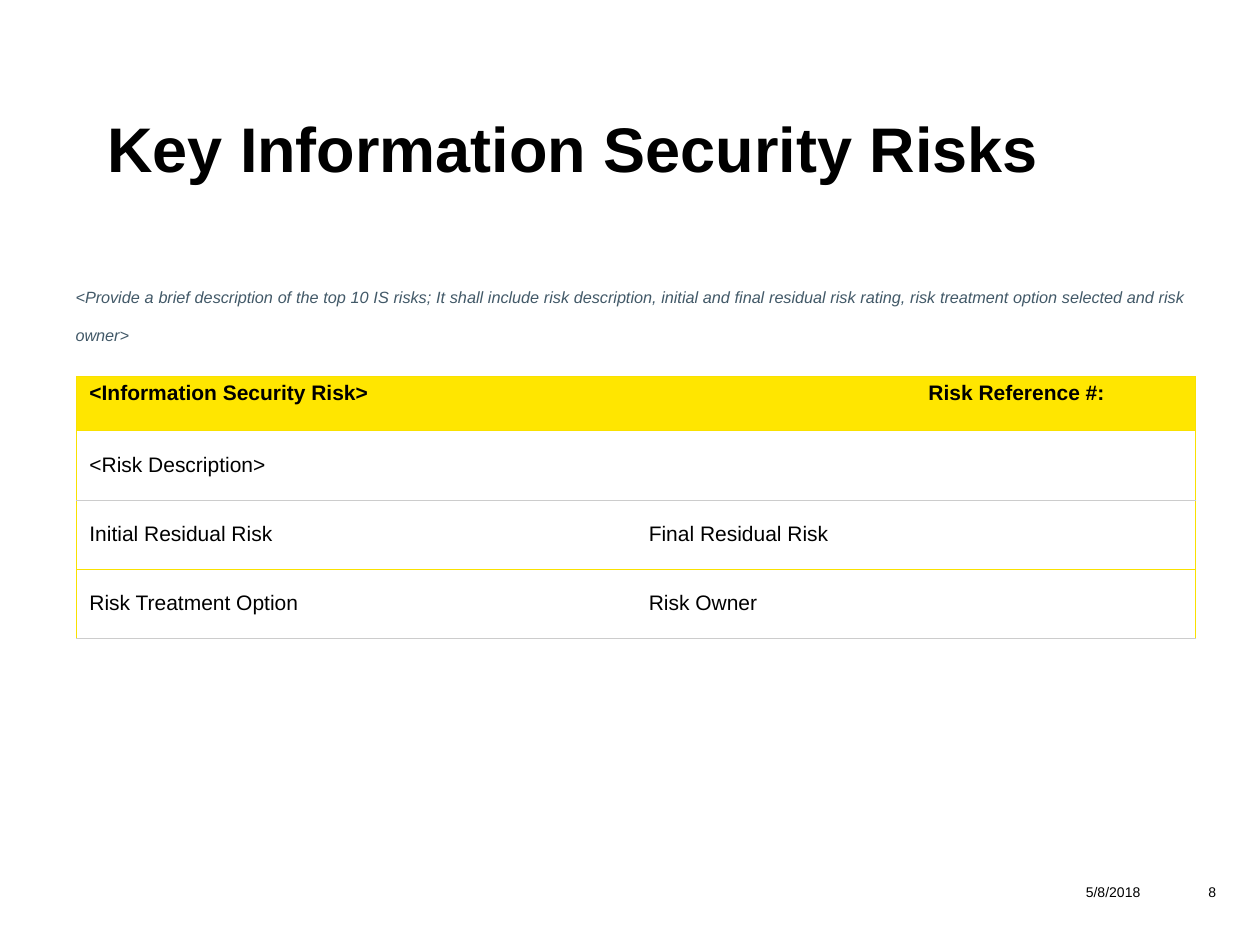
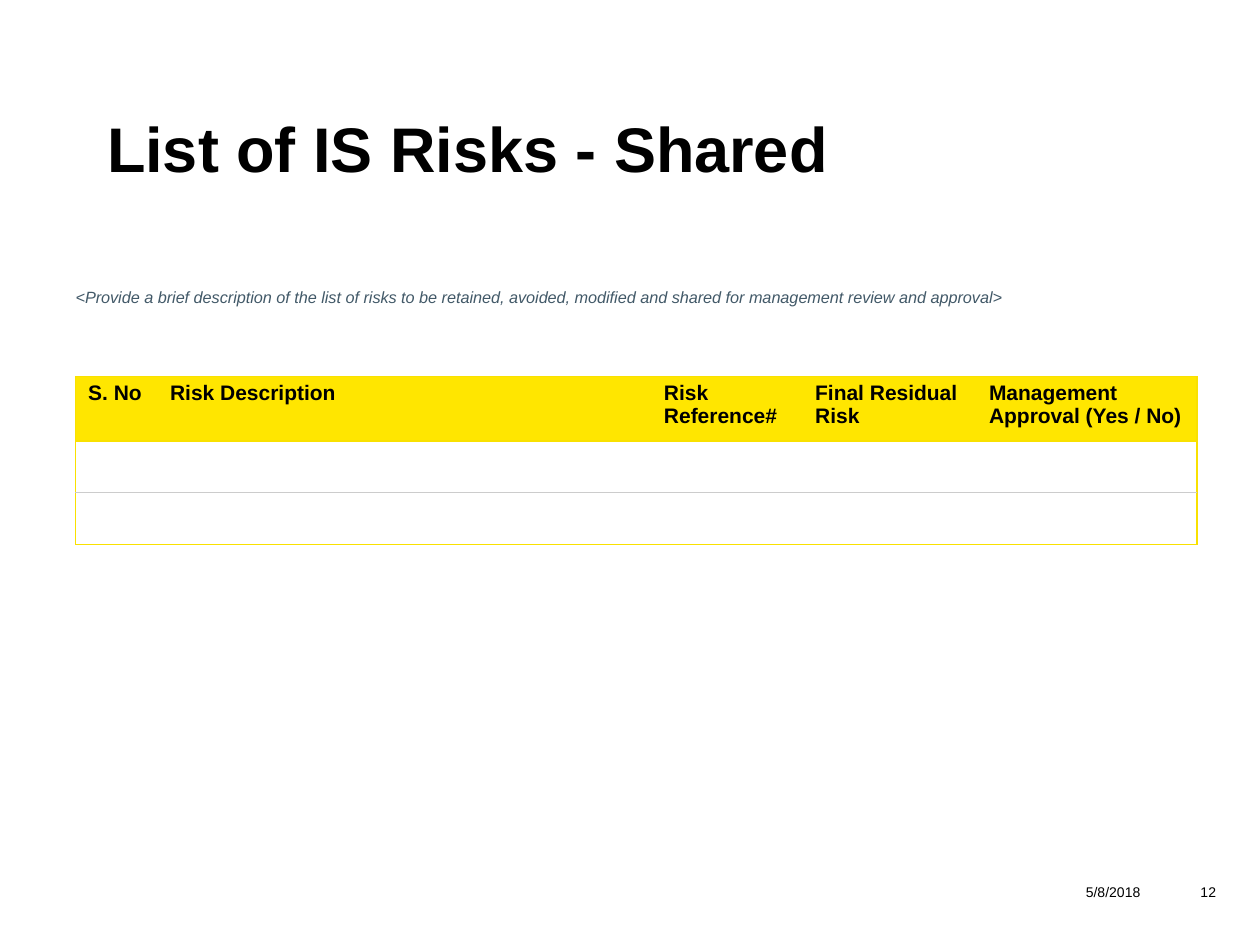
import pptx
import pptx.util
import pptx.dml.color
import pptx.enum.text
from dataclasses import dataclass
from lxml import etree
from pptx.util import Inches

ALIGN = pptx.enum.text.PP_ALIGN
ANCHOR = pptx.enum.text.MSO_ANCHOR
NS = "{http://schemas.openxmlformats.org/drawingml/2006/main}"
PLAIN_TABLE = "{2D5ABB26-0587-4C30-8999-92F81FD0307C}"


@dataclass(frozen=True)
class Theme:
    font: str = "Arial"
    ink: str = "000000"
    note: str = "425968"
    header: str = "FFE600"
    border: str = "F9E100"
    rule: str = "CCCCCC"
    title_pt: float = 36
    table_pt: float = 12
    note_pt: float = 9.3
    note_line_pt: float = 21.7
    footer_pt: float = 8
    border_pt: float = 0.75


class Deck:
    def __init__(self, theme):
        self.theme = theme
        self.prs = pptx.Presentation()
        self.prs.slide_width, self.prs.slide_height = Inches(10), Inches(7.5)
        self.s = None

    def place(self, sp, left, top, width, height):
        sp.left, sp.top = Inches(left), Inches(top)
        sp.width, sp.height = Inches(width), Inches(height)

    def set_text(self, tf, text, size, color=None, bold=False, italic=False,
                 align=ALIGN.LEFT, anchor=ANCHOR.MIDDLE):
        tf.text = text
        tf.word_wrap = True
        tf.vertical_anchor = anchor
        p = tf.paragraphs[0]
        p.alignment = align
        for r in p.runs:
            f = r.font
            f.name, f.size = self.theme.font, pptx.util.Pt(size)
            f.bold, f.italic = bold, italic
            f.color.rgb = pptx.dml.color.RGBColor.from_string(color or self.theme.ink)
        return p

    # Slide with title, guidance note and footer
    def slide(self, title, note, number):
        self.s = self.prs.slides.add_slide(self.prs.slide_layouts[1])
        self.title(title)
        self.note(note)
        self.footer("5/8/2018", 7.92, 1.83, ALIGN.CENTER)
        self.footer(number, 9.25, 0.5, ALIGN.RIGHT)

    def title(self, text):
        sp = self.s.shapes.title
        self.place(sp, 0.75, 0.42, 8.5, 1.5)
        sp.text_frame.auto_size = pptx.enum.text.MSO_AUTO_SIZE.NONE
        self.set_text(sp.text_frame, text, self.theme.title_pt, bold=True)

    def note(self, text):
        sp = self.s.placeholders[1]
        self.place(sp, 0.5, 2.08, 9, 0.91)
        tf = sp.text_frame
        tf.auto_size = pptx.enum.text.MSO_AUTO_SIZE.NONE
        p = self.set_text(tf, text, self.theme.note_pt, self.theme.note, italic=True,
                          align=ALIGN.JUSTIFY, anchor=ANCHOR.TOP)
        # No bullet and no hanging indent
        pPr = p._p.get_or_add_pPr()
        pPr.set("marL", "0")
        pPr.set("indent", "0")
        etree.SubElement(pPr, NS + "buNone")
        p.line_spacing = pptx.util.Pt(self.theme.note_line_pt)
        p.space_before = pptx.util.Pt(0)

    def footer(self, text, left, width, align):
        sp = self.s.shapes.add_textbox(0, 0, 0, 0)
        self.place(sp, left, 6.83, width, 0.5)
        self.set_text(sp.text_frame, text, self.theme.footer_pt, align=align)

    # Table with a filled header; merges are (row, first column, last column)
    def table(self, left, cols, heights, rows, rules, merges=()):
        frame = self.s.shapes.add_table(
            len(heights), len(cols), Inches(left), Inches(2.99),
            Inches(sum(cols)), Inches(sum(heights)))
        tbl = frame.table
        tbl.first_row = tbl.horz_banding = False
        tbl._tbl.tblPr.find(NS + "tableStyleId").text = PLAIN_TABLE
        for col, width in zip(tbl.columns, cols):
            col.width = Inches(width)
        for row, height in zip(tbl.rows, heights):
            row.height = Inches(height)
        for r, first, last in merges:
            tbl.cell(r, first).merge(tbl.cell(r, last))
        for r, texts in enumerate(rows):
            for c, text in enumerate(texts):
                self.cell(tbl.cell(r, c), text, r == 0)
                self.borders(tbl, r, c, rules)

    def cell(self, cell, text, is_header):
        if is_header:
            cell.fill.solid()
            cell.fill.fore_color.rgb = pptx.dml.color.RGBColor.from_string(self.theme.header)
        else:
            cell.fill.background()
        cell.vertical_anchor = ANCHOR.TOP if is_header else ANCHOR.MIDDLE
        if text:
            p = self.set_text(cell.text_frame, text, self.theme.table_pt, bold=is_header,
                              anchor=cell.vertical_anchor)
            p.line_spacing = 0.95

    def borders(self, tbl, r, c, rules):
        cell = tbl.cell(r, c)
        end = c + (cell.span_width if cell.is_merge_origin else 1)
        edges = {}
        if c == 0:
            edges["lnL"] = self.theme.border
        if end == len(tbl.columns):
            edges["lnR"] = self.theme.border
        edges["lnT"] = rules[r - 1] if r else self.theme.border
        edges["lnB"] = rules[r]
        tcPr = cell._tc.get_or_add_tcPr()
        for i, (tag, color) in enumerate(edges.items()):
            ln = etree.Element(NS + tag, w=str(pptx.util.Pt(self.theme.border_pt)))
            fill = etree.SubElement(ln, NS + "solidFill")
            etree.SubElement(fill, NS + "srgbClr", val=color)
            tcPr.insert(i, ln)


def main():
    theme = Theme()
    deck = Deck(theme)

    # Key risks
    deck.slide(
        "Key Information Security Risks",
        "<Provide a brief description of the top 10 IS risks; It shall include risk "
        "description, initial and final residual risk rating, risk treatment option "
        "selected and risk owner>", "8")
    deck.table(
        0.61, [2.22] * 4, [0.43] + [0.55] * 3,
        [["<Information Security Risk>", "", "", "Risk Reference #:"],
         ["<Risk Description>", "", "", ""],
         ["Initial Residual Risk", "", "Final Residual Risk", ""],
         ["Risk Treatment Option", "", "Risk Owner", ""]],
        rules=[theme.border, theme.rule, theme.border, theme.rule],
        merges=[(0, 0, 2), (1, 0, 3)])

    # Shared risks
    deck.slide(
        "List of IS Risks - Shared",
        "<Provide a brief description of the list of risks to be retained, avoided, "
        "modified and shared for management review and approval>", "12")
    deck.table(
        0.6, [0.65, 3.92, 1.2, 1.38, 1.75], [0.51] + [0.41] * 2,
        [["S. No", "Risk Description", "Risk Reference#", "Final Residual Risk",
          "Management Approval (Yes / No)"]] + [[""] * 5] * 2,
        rules=[theme.border, theme.rule, theme.border])

    deck.prs.save("out.pptx")


if __name__ == "__main__":
    main()
